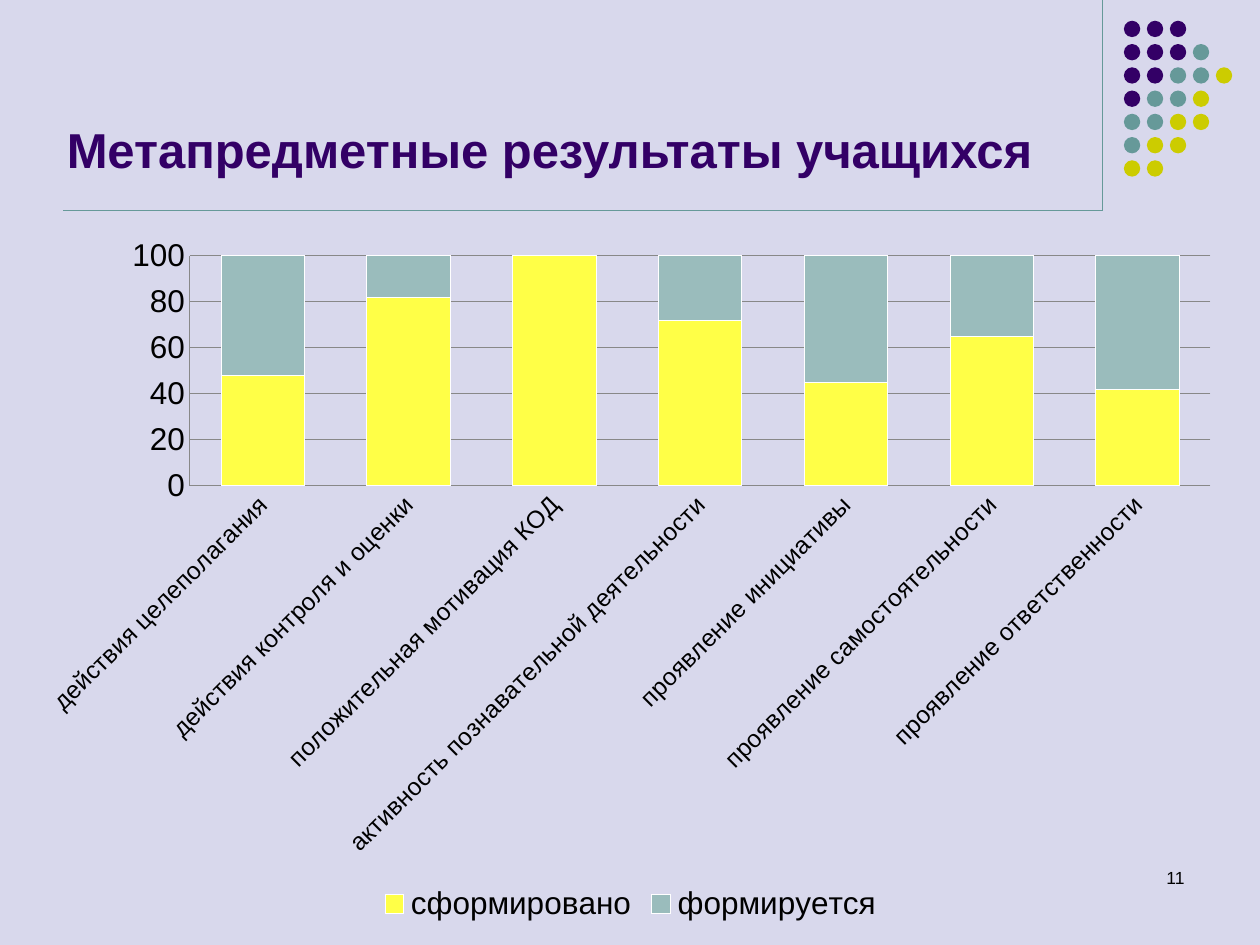
from lxml import etree
from pptx import Presentation, util as u
from pptx.chart.data import CategoryChartData
from pptx.dml.color import RGBColor
from pptx.enum import chart as ch, shapes, text
from pptx.oxml import parse_xml
from pptx.oxml.ns import nsdecls, qn

LAVENDER = RGBColor(0xD8, 0xD8, 0xEC)
PURPLE = RGBColor(0x33, 0x00, 0x66)
TEAL = RGBColor(0x66, 0x99, 0x99)
OLIVE = RGBColor(0xCC, 0xCC, 0x00)
YELLOW = RGBColor(0xFF, 0xFF, 0x47)
PALE_TEAL = RGBColor(0x9A, 0xBC, 0xBC)
GRAY = RGBColor(0x88, 0x88, 0x88)
WHITE = RGBColor(0xFF, 0xFF, 0xFF)
BLACK = RGBColor(0, 0, 0)
FONT = "Arial"

W, H = u.Inches(10), u.Inches(7.5)
RULE_X, RULE_Y = 0.875 * W, 0.223 * H

DOT_COLORS = {"P": PURPLE, "T": TEAL, "O": OLIVE}
DOT_ROWS = ["PPP", "PPPT", "PPTTO", "PTTO", "TTOO", "TOO", "OO"]

RESULTS = {
    "действия целеполагания": (48, 52),
    "действия контроля и оценки": (82, 18),
    "положительная мотивация КОД": (100, 0),
    "активность познавательной деятельности": (72, 28),
    "проявление инициативы": (45, 55),
    "проявление самостоятельности": (65, 35),
    "проявление ответственности": (42, 58),
}
SERIES = {"сформировано": YELLOW, "формируется": PALE_TEAL}


def share(x, y, w, h):
    """Turn shares of the slide's size into a box in EMU."""
    return int(x * W), int(y * H), int(w * W), int(h * H)


def write(tf, words, size, color, bold=False, align=text.PP_ALIGN.LEFT,
          anchor=text.MSO_ANCHOR.TOP):
    tf.word_wrap = True
    tf.vertical_anchor = anchor
    p = tf.paragraphs[0]
    p.alignment = align
    r = p.add_run()
    r.text = words
    f = r.font
    f.name, f.size, f.bold = FONT, u.Pt(size), bold
    f.color.rgb = color


def add_rule(s, x1, y1, x2, y2):
    line = s.shapes.add_connector(shapes.MSO_CONNECTOR.STRAIGHT,
                                  int(x1), int(y1), int(x2), int(y2))
    line.line.color.rgb = TEAL
    line.line.width = u.Pt(0.75)
    etree.SubElement(line._element.spPr, qn("a:effectLst"))


def add_dots(s, box):
    """Fill the box with a grid of dots, one letter of DOT_ROWS to a dot."""
    x, y, w, h = box
    cols = max(map(len, DOT_ROWS))
    dot = u.Inches(0.13)
    step_x, step_y = (w - dot) / (cols - 1), (h - dot) / (len(DOT_ROWS) - 1)
    group = s.shapes.add_group_shape()
    for row, letters in enumerate(DOT_ROWS):
        for col, letter in enumerate(letters):
            sp = group.shapes.add_shape(
                shapes.MSO_SHAPE.OVAL, int(x + col * step_x),
                int(y + row * step_y), dot, dot)
            sp.shadow.inherit = False
            sp.fill.solid()
            sp.fill.fore_color.rgb = DOT_COLORS[letter]
            sp.line.fill.background()


def add_title(s, box):
    title = s.shapes.title
    title.left, title.top, title.width, title.height = box
    write(title.text_frame, "Метапредметные результаты учащихся", 28, PURPLE,
          bold=True, anchor=text.MSO_ANCHOR.BOTTOM)


def place_plot(chart, x, y, w, h):
    """Fix the inner plot area, in shares of the chart's box."""
    area = chart._chartSpace.chart.plotArea
    for old in area.findall(qn("c:layout")):
        area.remove(old)
    sizes = "".join(f'<c:{tag} val="{val}"/>'
                    for tag, val in zip("xywh", (x, y, w, h)))
    area.insert(0, parse_xml(
        f'<c:layout {nsdecls("c")}><c:manualLayout>'
        '<c:layoutTarget val="inner"/><c:xMode val="edge"/>'
        f'<c:yMode val="edge"/>{sizes}</c:manualLayout></c:layout>'))


def format_axes(chart):
    cat, val = chart.category_axis, chart.value_axis
    for axis in (cat, val):
        axis.major_tick_mark = axis.minor_tick_mark = ch.XL_TICK_MARK.NONE
        axis.format.line.color.rgb = GRAY
    cat.tick_labels.font.size = u.Pt(14)
    labels = cat._element.find(qn("c:txPr"))
    labels.find(qn("a:bodyPr")).set("rot", "-2700000")
    val.minimum_scale, val.maximum_scale, val.major_unit = 0, 100, 20
    val.has_major_gridlines = True
    val.major_gridlines.format.line.color.rgb = GRAY


def add_results_chart(s, box):
    data = CategoryChartData()
    data.categories = list(RESULTS)
    for name, vals in zip(SERIES, zip(*RESULTS.values())):
        data.add_series(name, vals)
    chart = s.shapes.add_chart(ch.XL_CHART_TYPE.COLUMN_STACKED, *box, data).chart
    chart.has_title = False
    chart.font.name, chart.font.size = FONT, u.Pt(18)
    chart.font.color.rgb = BLACK
    chart.has_legend = True
    chart.legend.position = ch.XL_LEGEND_POSITION.BOTTOM
    chart.legend.include_in_layout = False
    plot = chart.plots[0]
    plot.gap_width, plot.overlap, plot.vary_by_categories = 75, 100, False
    for series, color in zip(plot.series, SERIES.values()):
        series.format.fill.solid()
        series.format.fill.fore_color.rgb = color
        series.format.line.color.rgb = WHITE
    format_axes(chart)
    place_plot(chart, 0.136, 0.045, 0.843, 0.327)


def add_slide_number(s, box):
    write(s.shapes.add_textbox(*box).text_frame, "11", 10, BLACK,
          align=text.PP_ALIGN.RIGHT)


def main():
    prs = Presentation()
    prs.slide_width, prs.slide_height = W, H
    s = prs.slides.add_slide(prs.slide_layouts[5])
    s.background.fill.solid()
    s.background.fill.fore_color.rgb = LAVENDER
    add_rule(s, RULE_X, 0, RULE_X, RULE_Y)
    add_dots(s, share(0.892, 0.022, 0.086, 0.165))
    add_rule(s, 0.05 * W, RULE_Y, RULE_X, RULE_Y)
    add_title(s, share(0.043, 0.07, 0.825, 0.125))
    add_results_chart(s, share(0.02, 0.237, 0.961, 0.745))
    add_slide_number(s, share(0.717, 0.911, 0.233, 0.067))
    prs.save("out.pptx")


if __name__ == "__main__":
    main()
